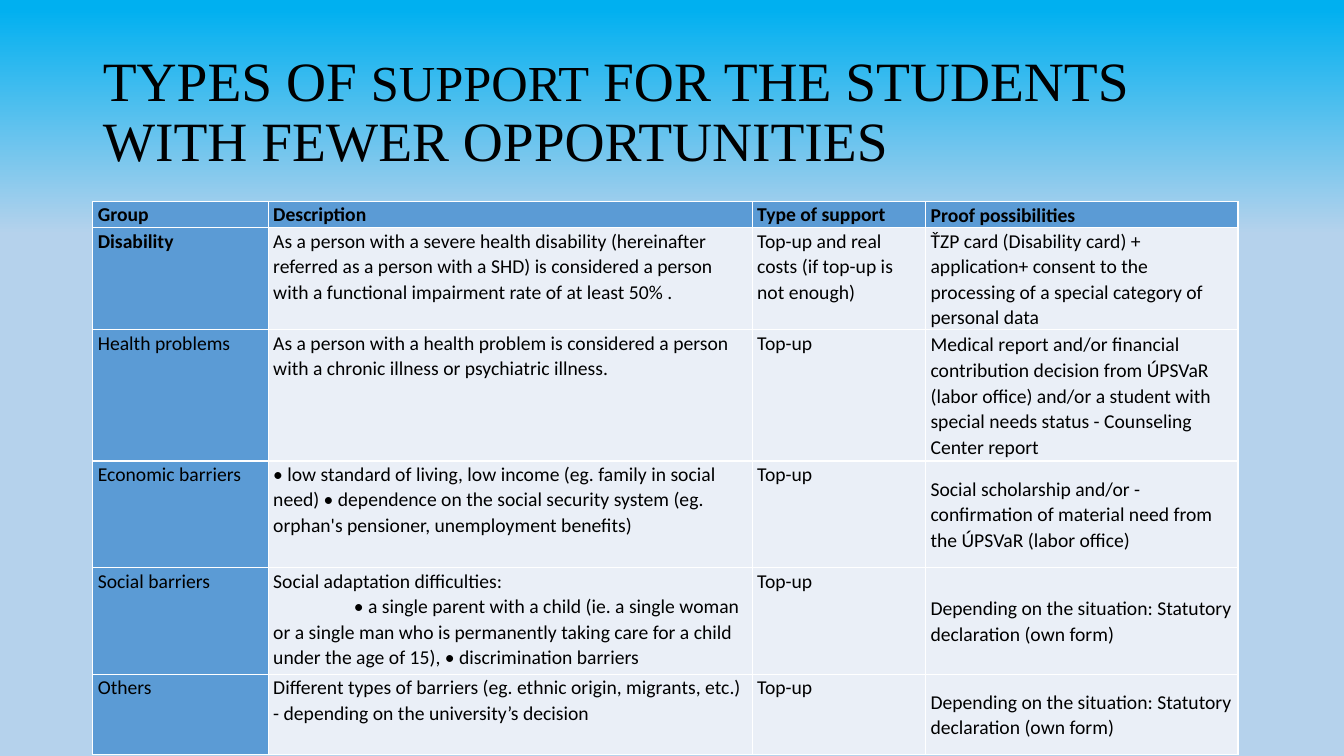
from dataclasses import dataclass

from lxml import etree
from pptx import Presentation
from pptx.dml.color import RGBColor
from pptx.enum.text import MSO_ANCHOR, MSO_AUTO_SIZE, PP_ALIGN
from pptx.oxml.ns import qn
from pptx.util import Inches, Pt

TOP, MIDDLE, BOTTOM = MSO_ANCHOR.TOP, MSO_ANCHOR.MIDDLE, MSO_ANCHOR.BOTTOM
LEFT = PP_ALIGN.LEFT
NO_AUTOFIT = MSO_AUTO_SIZE.NONE
TITLE_ONLY = 5


@dataclass(frozen=True)
class Theme:
    title_font: str = "Times New Roman"
    body_font: str = "Calibri"
    title_size: float = 39.6
    title_small_size: float = 36
    body_size: float = 14
    text: str = "000000"
    label_fill: str = "5B9BD5"
    body_fill: str = "EAEFF7"
    border: str = "FFFFFF"
    sky_top: str = "00B0F0"
    sky_bottom: str = "B5D2EC"


theme = Theme()


def add_text(paragraph, text, font=theme.body_font, size=theme.body_size, bold=False, line_spacing=1.07, space_after=0):
    paragraph.alignment = LEFT
    paragraph.line_spacing = line_spacing
    paragraph.space_before = Pt(0)
    paragraph.space_after = Pt(space_after)
    run = paragraph.add_run()
    run.text = text
    run.font.name = font
    run.font.size = Pt(size)
    run.font.bold = bold
    run.font.color.rgb = RGBColor.from_string(theme.text)


def add_borders(cell):
    properties = cell._tc.get_or_add_tcPr()
    for side in ("a:lnL", "a:lnR", "a:lnT", "a:lnB"):
        line = etree.SubElement(properties, qn(side), w=str(Pt(1)))
        fill = etree.SubElement(line, qn("a:solidFill"))
        etree.SubElement(fill, qn("a:srgbClr"), val=theme.border)


presentation = Presentation()
presentation.slide_width = Inches(13.33)
presentation.slide_height = Inches(7.5)
slide = presentation.slides.add_slide(presentation.slide_layouts[TITLE_ONLY])

background = slide.background.fill
background.gradient()
background.gradient_angle = 270
gradient = zip(background.gradient_stops, (0.01, 0.31), (theme.sky_top, theme.sky_bottom))
for stop, position, color in gradient:
    stop.position = position
    stop.color.rgb = RGBColor.from_string(color)

title = slide.shapes.title
title.left, title.top = Inches(0.92), Inches(0.4)
title.width, title.height = Inches(11.5), Inches(1.45)
title.text_frame.word_wrap = True
title.text_frame.auto_size = NO_AUTOFIT
title.text_frame.vertical_anchor = MIDDLE
for text, size in (
    ("TYPES OF ", theme.title_size),
    ("SUPPORT", theme.title_small_size),
    (" FOR THE STUDENTS WITH FEWER OPPORTUNITIES", theme.title_size),
):
    add_text(title.text_frame.paragraphs[0], text, font=theme.title_font, size=size, line_spacing=0.9)

top_up = "Top-up"
own_form = "Depending on the situation: Statutory declaration (own form)"
support_rows = [
    ("Group", "Description", "Type of support", "Proof possibilities"),
    (
        "Disability",
        "As a person with a severe health disability (hereinafter referred as a person with a SHD) "
        "is considered a person with a functional impairment rate of at least 50% .",
        "Top-up and real costs (if top-up is not enough)",
        "ŤZP card (Disability card) + application+ consent to the processing of a special category "
        "of personal data",
    ),
    (
        "Health problems",
        "As a person with a health problem is considered a person with a chronic illness or "
        "psychiatric illness.",
        top_up,
        "Medical report and/or financial contribution decision from ÚPSVaR (labor office) and/or "
        "a student with special needs status - Counseling Center report",
    ),
    (
        "Economic barriers",
        "• low standard of living, low income (eg. family in social need) • dependence on the "
        "social security system (eg. orphan's pensioner, unemployment benefits)",
        top_up,
        "Social scholarship and/or - confirmation of material need from the ÚPSVaR (labor office)",
    ),
    (
        "Social barriers",
        "Social adaptation difficulties:\n"
        "• a single parent with a child (ie. a single woman or a single man who is permanently "
        "taking care for a child under the age of 15), • discrimination barriers",
        top_up,
        own_form,
    ),
    (
        "Others",
        "Different types of barriers (eg. ethnic origin, migrants, etc.) - depending on the "
        "university’s decision",
        top_up,
        own_form,
    ),
]
column_widths = (1.74, 4.8, 1.72, 3.1)
row_heights = (0.26, 0.97, 1.3, 1.06, 1.06, 0.79)
proof_column = len(column_widths) - 1

table = slide.shapes.add_table(
    len(row_heights), len(column_widths), Inches(0.92), Inches(2),
    Inches(sum(column_widths)), Inches(sum(row_heights)),
).table
table.horz_banding = False
for column, width in zip(table.columns, column_widths):
    column.width = Inches(width)
for row, height in zip(table.rows, row_heights):
    row.height = Inches(height)

for row_index, row_texts in enumerate(support_rows):
    for column_index, text in enumerate(row_texts):
        cell = table.cell(row_index, column_index)
        is_header = row_index == 0
        is_label = is_header or column_index == 0
        is_proof = column_index == proof_column
        cell.margin_left = cell.margin_right = Inches(0.05)
        cell.margin_top = cell.margin_bottom = Inches(0)
        cell.vertical_anchor = TOP
        if is_proof:
            cell.vertical_anchor = BOTTOM if is_header else MIDDLE
        add_borders(cell)
        cell.fill.solid()
        cell.fill.fore_color.rgb = RGBColor.from_string(theme.label_fill if is_label else theme.body_fill)
        for line_index, line in enumerate(text.split("\n")):
            paragraph = cell.text_frame.paragraphs[0]
            if line_index > 0:
                paragraph = cell.text_frame.add_paragraph()
                paragraph._p.get_or_add_pPr().set("indent", str(Inches(0.8)))
            add_text(
                paragraph, line,
                bold=is_header or text == "Disability",
                space_after=8 if is_proof else 0,
            )

presentation.save("out.pptx")
